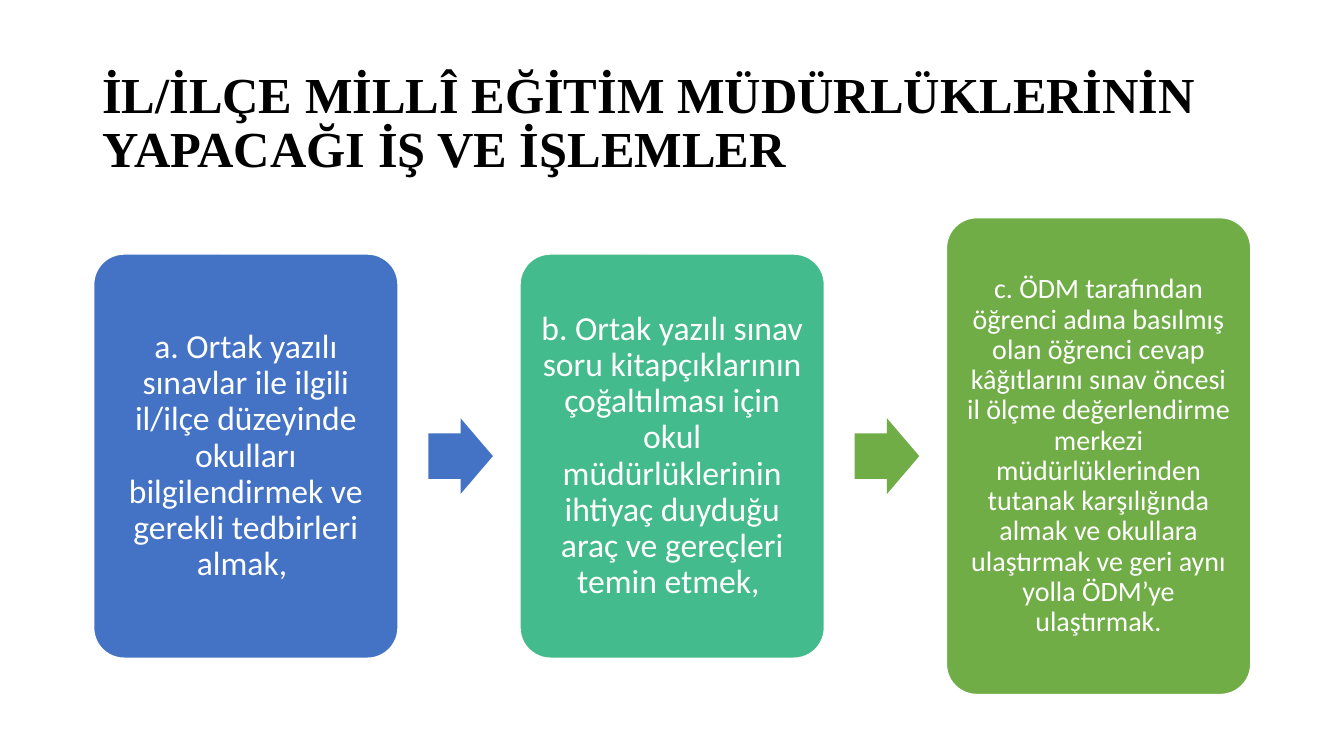
from dataclasses import dataclass

from pptx import Presentation
from pptx.dml.color import RGBColor
from pptx.enum import shapes, text
from pptx.slide import Slide
from pptx.text.text import TextFrame
from pptx.util import Pt

BLACK = RGBColor(0x00, 0x00, 0x00)
WHITE = RGBColor(0xFF, 0xFF, 0xFF)
BLUE = RGBColor(0x44, 0x72, 0xC4)
TEAL = RGBColor(0x43, 0xBB, 0x8D)
GREEN = RGBColor(0x70, 0xAD, 0x47)

CARD_LEFT = 66.9
CARD_STEP = 304.55
CARD_WIDTH = 217.4
CENTER_Y = 325.8
ARROW_OFFSET = 239.1
ARROW_WIDTH = 46.1
ARROW_HEIGHT = 54
INSET_PER_SIZE = 0.3

TITLE = "İL/İLÇE MİLLÎ EĞİTİM MÜDÜRLÜKLERİNİN YAPACAĞI İŞ VE İŞLEMLER"


@dataclass(frozen=True)
class Card:
    wording: str
    color: RGBColor
    height: float
    size: float


@dataclass(frozen=True)
class Arrow:
    after_card: int
    color: RGBColor


CARDS = [
    Card(
        "a. Ortak yazılı sınavlar ile ilgili il/ilçe düzeyinde okulları "
        "bilgilendirmek ve gerekli tedbirleri almak, ",
        BLUE, 288.7, 24,
    ),
    Card(
        "b. Ortak yazılı sınav soru kitapçıklarının çoğaltılması için okul "
        "müdürlüklerinin ihtiyaç duyduğu araç ve gereçleri temin etmek, ",
        TEAL, 288.7, 24,
    ),
    Card(
        "c. ÖDM tarafından öğrenci adına basılmış olan öğrenci cevap "
        "kâğıtlarını sınav öncesi il ölçme değerlendirme merkezi "
        "müdürlüklerinden tutanak karşılığında almak ve okullara "
        "ulaştırmak ve geri aynı yolla ÖDM’ye ulaştırmak.",
        GREEN, 340.6, 20,
    ),
]
ARROWS = [Arrow(0, BLUE), Arrow(1, GREEN)]


def write(frame: TextFrame, wording: str, font: str, size: float,
          color: RGBColor, align: text.PP_ALIGN, bold: bool = False) -> None:
    frame.word_wrap = True
    frame.vertical_anchor = text.MSO_ANCHOR.MIDDLE
    para = frame.paragraphs[0]
    para.alignment = align
    para.line_spacing = 0.9
    span = para.add_run()
    span.text = wording
    span.font.name = font
    span.font.size = Pt(size)
    span.font.bold = bold
    span.font.color.rgb = color


def add_title(page: Slide) -> None:
    box = page.shapes.add_textbox(Pt(66), Pt(44), Pt(828), Pt(89.3))
    write(box.text_frame, TITLE, "Times New Roman", 36, BLACK,
          text.PP_ALIGN.LEFT, bold=True)


def add_card(page: Slide, index: int, card: Card) -> None:
    box = page.shapes.add_shape(
        shapes.MSO_SHAPE.ROUNDED_RECTANGLE,
        Pt(CARD_LEFT + index * CARD_STEP), Pt(CENTER_Y - card.height / 2),
        Pt(CARD_WIDTH), Pt(card.height),
    )
    box.adjustments[0] = 0.1
    box.shadow.inherit = False
    box.fill.solid()
    box.fill.fore_color.rgb = card.color
    box.line.color.rgb = WHITE
    box.line.width = Pt(1)
    frame = box.text_frame
    inset = Pt(card.size * INSET_PER_SIZE)
    frame.margin_left = frame.margin_right = inset
    frame.margin_top = frame.margin_bottom = inset
    write(frame, card.wording, "Calibri", card.size, WHITE,
          text.PP_ALIGN.CENTER)


def add_arrow(page: Slide, arrow: Arrow) -> None:
    shape = page.shapes.add_shape(
        shapes.MSO_SHAPE.RIGHT_ARROW,
        Pt(CARD_LEFT + arrow.after_card * CARD_STEP + ARROW_OFFSET),
        Pt(CENTER_Y - ARROW_HEIGHT / 2), Pt(ARROW_WIDTH), Pt(ARROW_HEIGHT),
    )
    shape.adjustments[0] = 0.6
    shape.adjustments[1] = 0.5
    shape.shadow.inherit = False
    shape.fill.solid()
    shape.fill.fore_color.rgb = arrow.color
    shape.line.fill.background()


def main() -> None:
    deck = Presentation()
    deck.slide_width = Pt(960)
    deck.slide_height = Pt(540)
    page = deck.slides.add_slide(deck.slide_layouts[6])
    add_title(page)
    for index, card in enumerate(CARDS):
        add_card(page, index, card)
    for arrow in ARROWS:
        add_arrow(page, arrow)
    deck.save("out.pptx")


if __name__ == "__main__":
    main()
